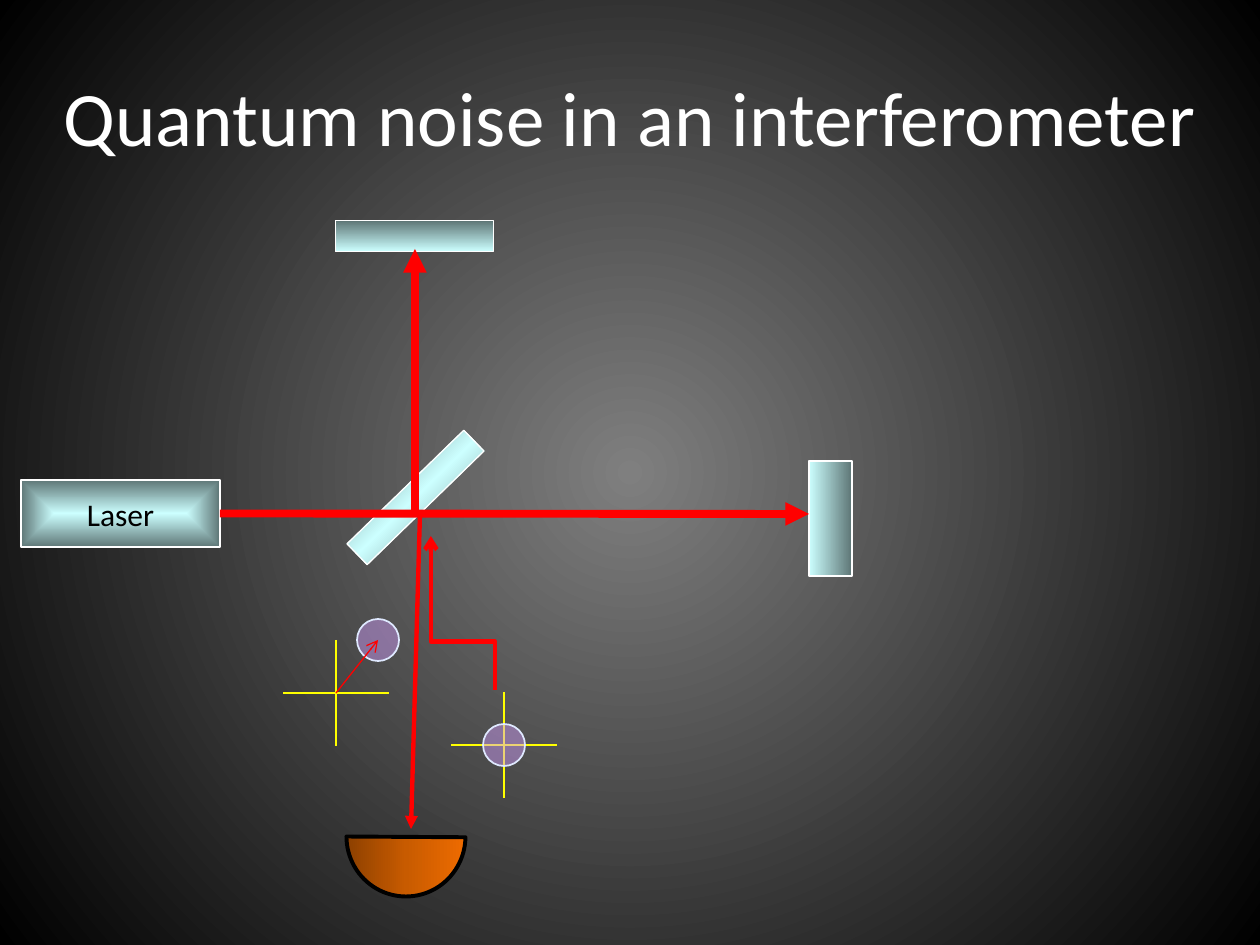
from lxml.etree import SubElement
from pptx import Presentation
from pptx.dml.color import RGBColor
from pptx.enum.shapes import MSO_CONNECTOR, MSO_SHAPE
from pptx.enum.text import MSO_ANCHOR, MSO_AUTO_SIZE, PP_ALIGN
from pptx.oxml.ns import qn
from pptx.util import Emu, Pt

HUES = {
    "white": "FFFFFF", "black": "000000", "gray": "7F7F7F", "glass": "CCFFFF",
    "shade": "5E7676", "beam": "FF0000", "axis": "FFFF00", "noise": "D49FFF",
    "rim": "DFE9FF", "rust": "8D4000", "amber": "C85B00", "orange": "EE6B00",
}
MIRROR = ["glass", "shade"]


def px(num):
    return Emu(round(num * 914400 / 126))


def hue(name):
    return RGBColor.from_string(HUES[name])


def assign(item, vals):
    for key, val in vals.items():
        setattr(item, key, val)


class Board:
    """Holds the style and the current slide, and draws each kind of element."""

    font = "Calibri"

    def __init__(self, deck):
        self.slide = deck.slides.add_slide(deck.slide_layouts[5])

    def blend(self, fill, root, names, angle=0, focus=None):
        fill.gradient()
        grad = root.find(".//" + qn("a:gradFill"))
        grad.clear()
        grad.set("rotWithShape", "1")
        stops = SubElement(grad, qn("a:gsLst"))
        for i, name in enumerate(names):
            stop = SubElement(stops, qn("a:gs"), pos=str(100000 * i // (len(names) - 1)))
            SubElement(stop, qn("a:srgbClr"), val=HUES[name])
        if focus:
            kind = SubElement(grad, qn("a:path"), {"path": focus})
            SubElement(kind, qn("a:fillToRect"), dict.fromkeys("ltrb", "50000"))
        else:
            SubElement(grad, qn("a:lin"), ang=str(angle * 60000), scaled="0")

    def back(self, names):
        self.blend(self.slide.background.fill, self.slide.element, names, focus="circle")

    def label(self, frame, text, size, color, form):
        assign(frame, form)
        para = frame.paragraphs[0]
        para.alignment = PP_ALIGN.CENTER
        run = para.add_run()
        run.text = text
        assign(run.font, {"name": self.font, "size": Pt(size)})
        run.font.color.rgb = hue(color)

    def title(self, text, box):
        head = self.slide.shapes.title
        assign(head, dict(zip(("left", "top", "width", "height"), map(px, box))))
        self.label(head.text_frame, text, 44, "white", {
            "vertical_anchor": MSO_ANCHOR.BOTTOM, "word_wrap": True,
            "auto_size": MSO_AUTO_SIZE.NONE})

    def shape(self, kind, box, line, weight, turn=0):
        item = self.slide.shapes.add_shape(kind, *map(px, box))
        item.shadow.inherit = False
        item.rotation = turn
        item.line.color.rgb = hue(line)
        item.line.width = Pt(weight)
        return item

    def block(self, box, names, turn=0, focus=None):
        item = self.shape(MSO_SHAPE.RECTANGLE, box, "white", 0.75, turn)
        self.blend(item.fill, item.element, names, focus=focus)
        return item

    def bowl(self, box, names):
        item = self.shape(MSO_SHAPE.CHORD, box, "black", 2.25, 270)
        item.adjustments[0], item.adjustments[1] = 54.44, 162
        self.blend(item.fill, item.element, names, angle=90)

    def ball(self, x, y, size=42):
        box = (x - size / 2, y - size / 2, size, size)
        item = self.shape(MSO_SHAPE.OVAL, box, "rim", 1)
        item.fill.solid()
        item.fill.fore_color.rgb = hue("noise")
        tint = item.element.spPr.find(qn("a:solidFill")).find(qn("a:srgbClr"))
        SubElement(tint, qn("a:alpha"), val="45000")

    def line(self, ends, color, weight, tip=None, kind=MSO_CONNECTOR.STRAIGHT):
        item = self.slide.shapes.add_connector(kind, *map(px, ends))
        item.line.color.rgb = hue(color)
        item.line.width = Pt(weight)
        props = item.element.spPr
        if tip:
            SubElement(props.find(qn("a:ln")), qn("a:tailEnd"), type=tip)
        SubElement(props, qn("a:effectLst"))
        return item

    def elbow(self, ends, bend):
        item = self.line(ends, "beam", 2.5, "arrow", MSO_CONNECTOR.ELBOW)
        props = item.element.spPr
        props.find(qn("a:xfrm")).set("rot", str(90 * 60000))
        geom = props.find(qn("a:prstGeom"))
        guides = geom.find(qn("a:avLst"))
        if guides is None:
            guides = SubElement(geom, qn("a:avLst"))
        SubElement(guides, qn("a:gd"), name="adj1", fmla=f"val {bend}")

    def cross(self, x, y, arm=53):
        self.line((x, y - arm, x, y + arm), "axis", 1)
        self.line((x + arm, y, x - arm, y), "axis", 1)


def main():
    deck = Presentation()
    deck.slide_width, deck.slide_height = px(1260), px(945)
    board = Board(deck)
    board.back(["gray", "black"])
    board.title("Quantum noise in an interferometer", (21, 52, 1218, 116))

    board.block((809, 461, 43, 115), MIRROR)
    board.block((399, 157, 31, 158), MIRROR, 270)
    board.block((401, 416, 29, 163), ["shade", "glass", "shade"], 45.8)
    laser = board.block((21, 480, 199, 67), MIRROR, focus="shape")
    board.label(laser.text_frame, "Laser", 18, "black", {
        "vertical_anchor": MSO_ANCHOR.MIDDLE, "word_wrap": False})

    beam = board.line((220, 514, 809, 514), "beam", 4.5, "triangle")
    beam.begin_connect(laser, 3)
    board.line((415, 514, 415, 249), "beam", 4.5, "triangle")
    board.line((420, 514, 411, 829), "beam", 2.5, "triangle")
    board.bowl((346, 777, 120, 119), ["rust", "amber", "orange"])

    board.cross(504, 745)
    board.ball(504, 745)
    board.elbow((540, 581, 386, 645), 31500)
    board.cross(336, 693)
    board.ball(378, 640)
    board.line((336, 693, 378, 640), "beam", 0.75, "arrow")
    deck.save("out.pptx")


if __name__ == "__main__":
    main()
